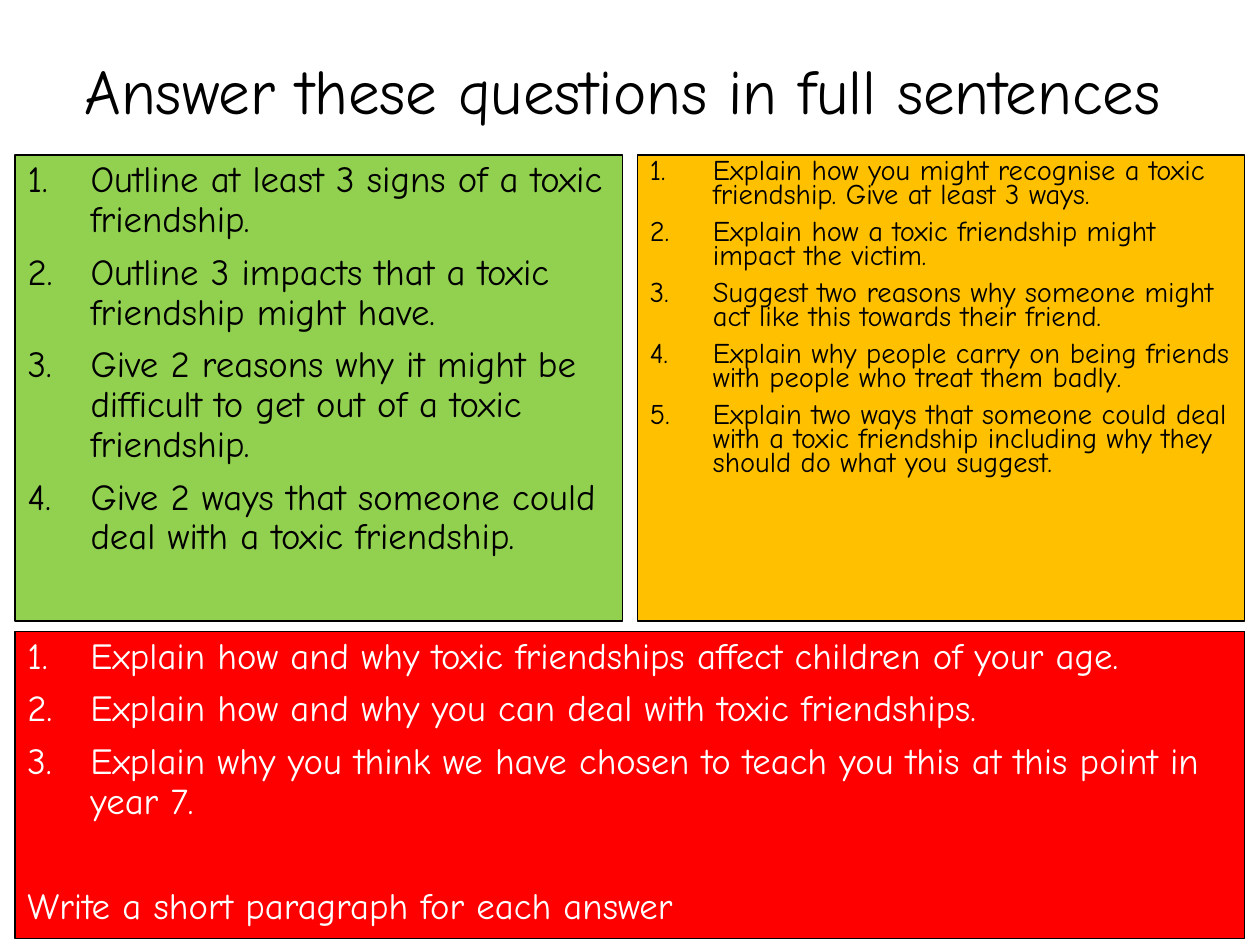
from dataclasses import dataclass

from lxml import etree
from pptx import Presentation
from pptx import util as u
from pptx.dml.color import RGBColor
from pptx.enum import shapes, text
from pptx.oxml.ns import qn
from pptx.slide import Slide


def colour(value):
    return RGBColor.from_string(value)


@dataclass
class QuestionSlide:
    """Holds the slide and its style, and adds each kind of element."""

    slide: Slide
    font: str = "Comic Neue"
    ink: str = "000000"
    indent: float = 0.5
    gap: float = 7.5

    def style(self, paragraph, size, ink, spacing=0.9, before=0):
        paragraph.line_spacing = spacing
        paragraph.space_before = u.Pt(before)
        paragraph.font.name = self.font
        paragraph.font.size = u.Pt(size)
        paragraph.font.color.rgb = colour(ink)

    def number(self, paragraph):
        properties = paragraph._p.get_or_add_pPr()
        properties.set("marL", str(u.Inches(self.indent)))
        properties.set("indent", str(-u.Inches(self.indent)))
        etree.SubElement(properties, qn("a:buAutoNum"), type="arabicPeriod")

    def title(self, wording, left, top, width, height, size=36):
        shape = self.slide.shapes.add_textbox(*map(u.Inches, (left, top, width, height)))
        frame = shape.text_frame
        frame.word_wrap = True
        frame.vertical_anchor = text.MSO_ANCHOR.MIDDLE
        paragraph = frame.paragraphs[0]
        paragraph.text = wording
        paragraph.alignment = text.PP_ALIGN.CENTER
        self.style(paragraph, size, self.ink)

    def panel(self, box, fill, questions, size=21, spacing=0.9, ink=None, closing=None):
        ink = ink or self.ink
        shape = self.slide.shapes.add_shape(
            shapes.MSO_SHAPE.RECTANGLE, *map(u.Inches, box)
        )
        shape.shadow.inherit = False
        shape.fill.solid()
        shape.fill.fore_color.rgb = colour(fill)
        shape.line.color.rgb = colour(self.ink)
        shape.line.width = u.Pt(0.75)
        frame = shape.text_frame
        frame.word_wrap = True
        frame.vertical_anchor = text.MSO_ANCHOR.TOP
        for index, question in enumerate(questions):
            paragraph = frame.add_paragraph() if index else frame.paragraphs[0]
            paragraph.text = question
            paragraph.alignment = text.PP_ALIGN.LEFT
            self.number(paragraph)
            self.style(paragraph, size, ink, spacing, self.gap)
        if closing:
            paragraph = frame.add_paragraph()
            paragraph.text = closing
            paragraph.alignment = text.PP_ALIGN.LEFT
            self.style(paragraph, size, ink, spacing, 5 * self.gap)


def main():
    presentation = Presentation()
    presentation.slide_width = u.Inches(10)
    presentation.slide_height = u.Inches(7.5)
    page = QuestionSlide(presentation.slides.add_slide(presentation.slide_layouts[6]))

    margin, top, width, height = 0.12, 1.23, 4.82, 3.7
    page.title("Answer these questions in full sentences", -0.57, 0.02, 11.02, 1.45)
    page.panel(
        (margin, top, width, height),
        "92D050",
        [
            "Outline at least 3 signs of a toxic friendship.",
            "Outline 3 impacts that a toxic friendship might have.",
            "Give 2 reasons why it might be difficult to get out of a toxic friendship.",
            "Give 2 ways that someone could deal with a toxic friendship.",
        ],
    )
    page.panel(
        (2 * margin + width, top, width, height),
        "FFC000",
        [
            "Explain how you might recognise a toxic friendship. Give at least 3 ways.",
            "Explain how a toxic friendship might impact the victim.",
            "Suggest two reasons why someone might act like this towards their friend.",
            "Explain why people carry on being friends with people who treat them badly.",
            "Explain two ways that someone could deal with a toxic friendship "
            "including why they should do what you suggest.",
        ],
        size=16.3,
        spacing=0.7,
    )
    page.panel(
        (margin, 5.01, 2 * width + margin, 2.44),
        "FF0000",
        [
            "Explain how and why toxic friendships affect children of your age.",
            "Explain how and why you can deal with toxic friendships.",
            "Explain why you think we have chosen to teach you this at this point in year 7.",
        ],
        ink="FFFFFF",
        closing="Write a short paragraph for each answer",
    )
    presentation.save("out.pptx")


if __name__ == "__main__":
    main()
